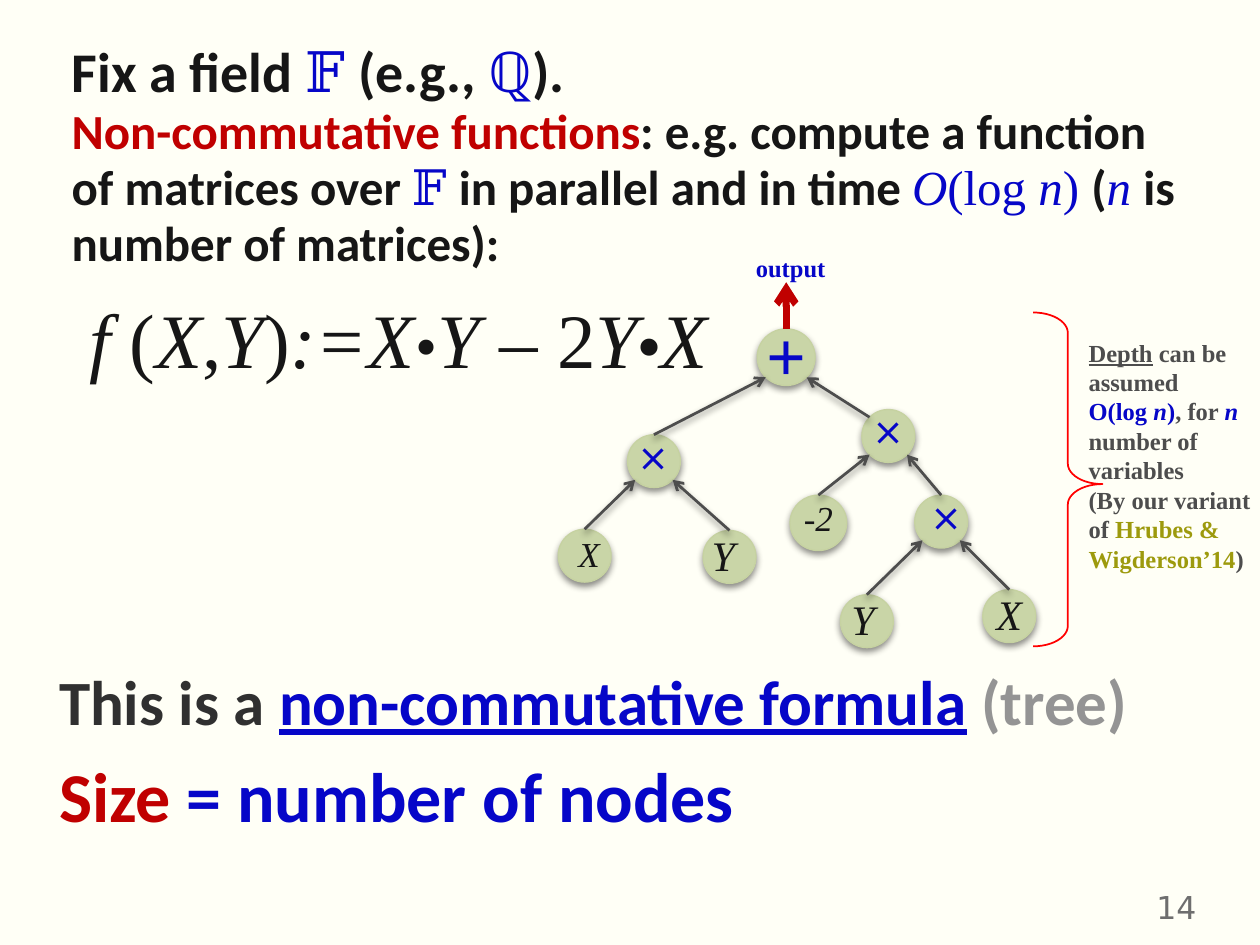
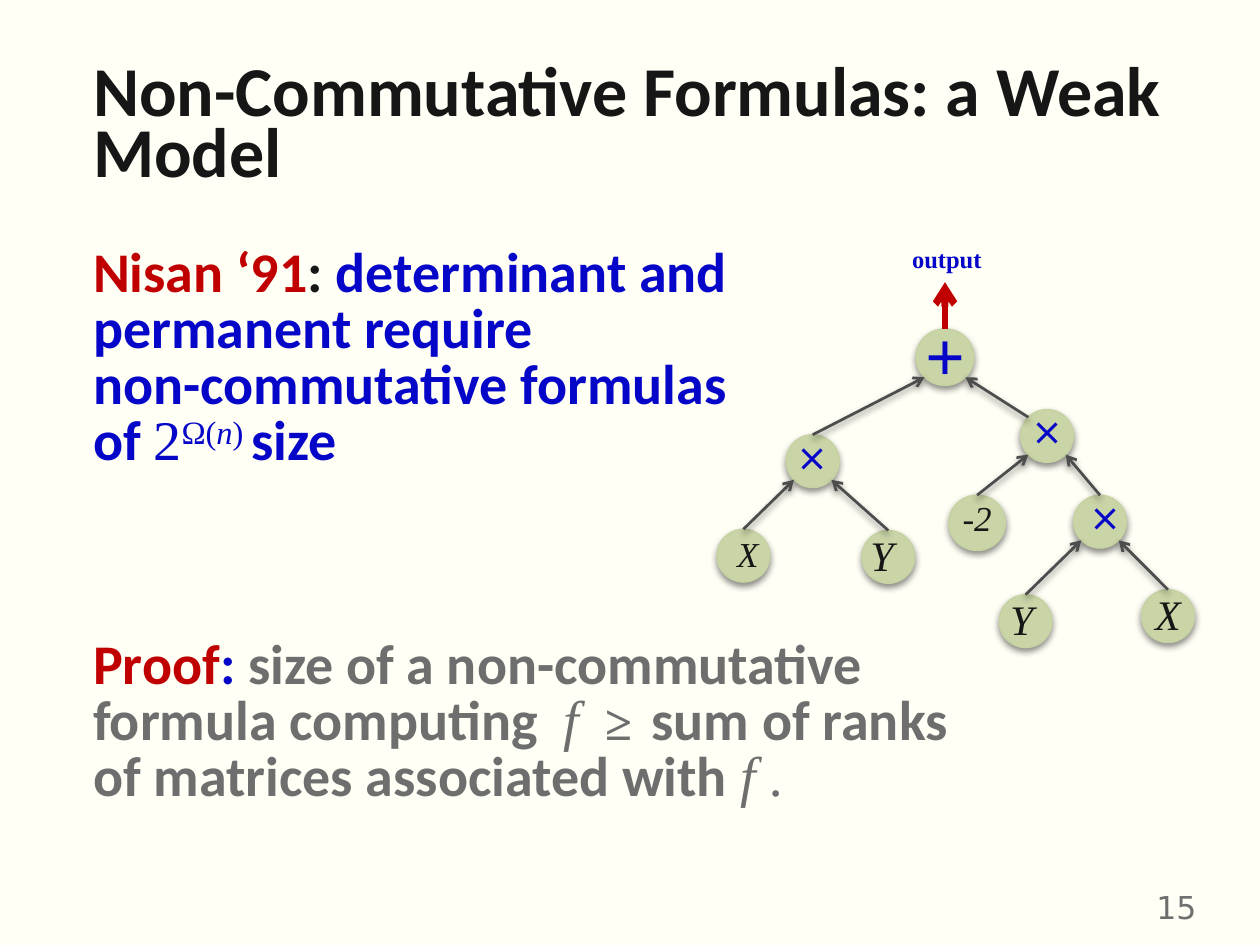
from dataclasses import dataclass
from math import sqrt

from lxml.etree import SubElement
from pptx import Presentation
from pptx.dml.color import RGBColor
from pptx.enum.shapes import MSO_CONNECTOR, MSO_SHAPE
from pptx.enum.text import MSO_ANCHOR, PP_ALIGN
from pptx.oxml.ns import qn
from pptx.util import Inches, Pt


@dataclass(frozen=True)
class Theme:
    # Colours
    paper: str = "FFFFF6"
    ink: str = "161616"
    dark: str = "303030"
    blue: str = "0606C8"
    red: str = "C00000"
    olive: str = "9D9A0D"
    grey: str = "6E6E6E"
    pale: str = "949494"
    edge: str = "4D4D4D"
    brace: str = "FF0000"
    node: str = "C9D5A7"
    rim: str = "C6D2A1"
    # Fonts
    sans: str = "Calibri"
    serif: str = "Times New Roman"
    digits: str = "DejaVu Sans"
    # Type sizes
    formula: int = 44
    title: int = 40
    statement: int = 36
    body: int = 32
    detail: int = 28
    leaf: int = 24
    small_leaf: int = 20
    page: int = 18
    note: int = 14


THEME = Theme()


def ink(colour):
    return {"color": colour}


def size(points):
    return {"size": Pt(points)}


# Run formats
HEAD = {"name": THEME.sans, "bold": True}
MATH = {"name": THEME.serif, "bold": False, "italic": False}
VAR = {**MATH, "italic": True}
NOTE = {"name": THEME.serif, "bold": True, **size(THEME.note)}
SUPER = {"baseline": "30000"}
WIDE_SPACE = {"spc": "700"}
LINE = {"line_spacing": Pt(32)}
CENTRED = {"alignment": PP_ALIGN.CENTER}
BLUE, RED, INK, GREY, EDGE = map(
    ink, (THEME.blue, THEME.red, THEME.ink, THEME.grey, THEME.edge))

# Formula tree: left, top, width, height, label, formats, insets
GATE = ("˟", {**MATH, **size(THEME.statement), **BLUE})
LEAF = {**VAR, **size(THEME.leaf), **INK}
SMALL_LEAF = {**LEAF, **size(THEME.small_leaf)}
NODES = {
    "sum": (6.01, 2.61, 0.46, 0.45, "+",
            {**MATH, "bold": True, **size(THEME.title), **BLUE}, (0, 0, 0, 0)),
    "xy": (4.98, 3.45, 0.42, 0.42, *GATE, (0, 0.2, 0, 0.05)),
    "minus 2yx": (6.84, 3.25, 0.42, 0.42, *GATE, (0, 0.2, 0, 0.05)),
    "yx": (7.26, 3.93, 0.42, 0.42, *GATE, (0.1, 0.2, 0.1, 0.05)),
    "left x": (4.43, 4.2, 0.42, 0.42, "X", SMALL_LEAF, (0.1, 0.05, 0.1, 0.05)),
    "left y": (5.58, 4.21, 0.42, 0.42, "Y", LEAF, (0, 0.05, 0.1, 0.05)),
    "minus 2": (6.27, 3.93, 0.45, 0.44, "-2", SMALL_LEAF, (0, 0, 0, 0.05)),
    "right y": (6.67, 4.72, 0.42, 0.42, "Y", LEAF, (0, 0, 0.06, 0)),
    "right x": (7.8, 4.68, 0.42, 0.42, "X", LEAF, (0, 0, 0, 0)),
}
# Child, parent, side of the parent (-1 left, 1 right)
EDGES = [
    ("xy", "sum", -1), ("minus 2yx", "sum", 1),
    ("left x", "xy", -1), ("left y", "xy", 1),
    ("minus 2", "minus 2yx", -1), ("yx", "minus 2yx", 1),
    ("right y", "yx", -1), ("right x", "yx", 1),
]


def diagonal_point(node, across, down):
    """Point on a node's rim at 45 degrees."""
    left, top, width, height = node[:4]
    return (left + width / 2 * (1 + across / sqrt(2)),
            top + height / 2 * (1 + down / sqrt(2)))


class Deck:
    def __init__(self, theme):
        self.theme = theme
        self.prs = Presentation()
        self.prs.slide_width, self.prs.slide_height = Inches(10), Inches(7.5)
        paper = self.prs.slide_master.background.fill
        paper.solid()
        paper.fore_color.rgb = RGBColor.from_string(theme.paper)
        self.slide = None

    def new_slide(self, number):
        self.slide = self.prs.slides.add_slide(self.prs.slide_layouts[6])
        self.text(9.08, 7, 0.67, 0.33, [[(
            str(number), {"name": self.theme.digits},
            size(self.theme.page), GREY)]])

    def add_paragraphs(self, frame, paragraphs, formats):
        """Each paragraph is a list of runs: (text, format, format, ...)."""
        for index, runs in enumerate(paragraphs):
            paragraph = frame.add_paragraph() if index else frame.paragraphs[0]
            for key, value in formats.items():
                if index or key != "space_before":
                    setattr(paragraph, key, value)
            for words, *run_formats in runs:
                run = paragraph.add_run()
                run.text = words
                for run_format in run_formats:
                    self.format_run(run, run_format)

    def format_run(self, run, run_format):
        for key, value in run_format.items():
            if key == "color":
                run.font.color.rgb = RGBColor.from_string(value)
            elif key in ("baseline", "spc"):
                run.font._element.set(key, value)
            else:
                setattr(run.font, key, value)

    def set_insets(self, frame, insets):
        for side, inset in zip(("left", "top", "right", "bottom"), insets):
            setattr(frame, f"margin_{side}", Inches(inset))

    def text(self, left, top, width, height, paragraphs, formats=None,
             insets=(0.1, 0.05, 0.1, 0.05)):
        box = self.slide.shapes.add_textbox(
            Inches(left), Inches(top), Inches(width), Inches(height))
        box.text_frame.word_wrap = True
        self.set_insets(box.text_frame, insets)
        self.add_paragraphs(box.text_frame, paragraphs, formats or {})

    def stroke(self, shape, colour, width):
        shape.line.color.rgb = RGBColor.from_string(colour)
        shape.line.width = Pt(width)

    def effects(self, shape, shadow):
        """Replace the theme's shadow with a soft one or with none."""
        effects = SubElement(shape._element.spPr, qn("a:effectLst"))
        if shadow:
            outer = SubElement(effects, qn("a:outerShdw"), blurRad=str(Pt(4)),
                               dist=str(Pt(2)), dir="5400000", rotWithShape="0")
            black = SubElement(outer, qn("a:srgbClr"), val="000000")
            SubElement(black, qn("a:alpha"), val="45000")

    def node(self, left, top, width, height, label, label_format, insets):
        circle = self.slide.shapes.add_shape(
            MSO_SHAPE.OVAL, Inches(left), Inches(top),
            Inches(width), Inches(height))
        circle.fill.solid()
        circle.fill.fore_color.rgb = RGBColor.from_string(self.theme.node)
        self.stroke(circle, self.theme.rim, 0.75)
        self.effects(circle, shadow=True)
        circle.text_frame.word_wrap = True
        circle.text_frame.vertical_anchor = MSO_ANCHOR.MIDDLE
        self.set_insets(circle.text_frame, insets)
        self.add_paragraphs(circle.text_frame, [[(label, label_format)]],
                            {**CENTRED, "line_spacing": 0.95})
        return circle

    def arrow(self, start, end, colour, width, shadow, source=None):
        line = self.slide.shapes.add_connector(
            MSO_CONNECTOR.STRAIGHT, *map(Inches, (*start, *end)))
        if source is not None:
            line.begin_connect(source, 0)
        self.stroke(line, colour, width)
        SubElement(line._element.spPr.find(qn("a:ln")), qn("a:tailEnd"),
                   type="arrow")
        self.effects(line, shadow)

    def brace(self, left, top, width, height):
        brace = self.slide.shapes.add_shape(
            MSO_SHAPE.RIGHT_BRACE, Inches(left), Inches(top),
            Inches(width), Inches(height))
        brace.adjustments[0], brace.adjustments[1] = 0.295, 0.514
        brace.fill.background()
        self.stroke(brace, self.theme.brace, 1)
        self.effects(brace, shadow=False)

    def formula_tree(self, shift, output_left, output_top):
        nodes = {key: (node[0] + shift, *node[1:])
                 for key, node in NODES.items()}
        circles = {key: self.node(*node) for key, node in nodes.items()}
        for child, parent, side in EDGES:
            left, top, width, *_ = nodes[child]
            start, source = (left + width / 2, top), circles[child]
            if child == "minus 2yx":
                start, source = diagonal_point(nodes[child], -1, -1), None
            self.arrow(start, diagonal_point(nodes[parent], side, 1),
                       self.theme.edge, 1.57, True, source)
        # Output arrow and label
        left, top, width, *_ = nodes["sum"]
        middle = left + width / 2
        self.arrow((middle, top), (middle, 2.24), self.theme.red, 4, False,
                   circles["sum"])
        self.text(output_left, output_top, 1.17, 0.34,
                  [[("output", NOTE, BLUE)]], CENTRED)


def formula_slide(deck):
    deck.new_slide(14)
    # Setting
    first, second = size(THEME.body), size(THEME.detail)
    deck.text(0.47, 0.33, 9.02, 1.9, [
        [("Fix a field ", HEAD, first, INK), ("𝔽", MATH, first, BLUE),
         (" (e.g., ", HEAD, first, INK),
         ("ℚ", MATH, first, BLUE), (").", HEAD, first, INK)],
        [("Non-commutative functions", HEAD, second, RED),
         (": e.g. compute a function of matrices over ", HEAD, second, INK),
         ("𝔽 ", MATH, second, BLUE),
         ("in parallel and in time ", HEAD, second, INK),
         ("O", VAR, second, BLUE), ("(log ", MATH, second, BLUE),
         ("n", VAR, second, BLUE), (") ", MATH, second, BLUE),
         ("(", HEAD, second, INK), ("n ", VAR, second, BLUE),
         ("is number of matrices):", HEAD, second, INK)],
    ], LINE)
    # Example function
    large, dot = size(THEME.formula), size(THEME.statement)
    deck.text(0.61, 2.55, 5.4, 0.55, [[
        (words, style, points, INK) for words, style, points in (
            ("f ", VAR, large), ("(", MATH, large), ("X", VAR, large),
            (",", MATH, large), ("Y", VAR, large), (")", MATH, large),
            (":=X", VAR, large), ("•", MATH, dot), ("Y ", VAR, large),
            ("– 2", MATH, large), ("Y", VAR, large),
            ("•", {**MATH, "bold": True}, dot), ("X", VAR, large))
    ]], LINE)
    # Definitions
    statement, big = size(THEME.statement), size(THEME.title)
    deck.text(0.37, 5.21, 9.12, 1.5, [
        [("This is a ", HEAD, statement, ink(THEME.dark)),
         ("non-commutative formula", HEAD, statement, BLUE,
          {"underline": True}),
         (" ", HEAD, statement), ("(tree)", HEAD, statement, ink(THEME.pale))],
        [("Size ", HEAD, big, RED), ("= number of nodes", HEAD, big, BLUE)],
    ], {"space_before": Pt(8)})
    # Tree with its depth
    deck.formula_tree(0, 5.69, 1.96)
    deck.brace(8.2, 2.48, 0.55, 2.65)
    slanted = {"italic": True}
    deck.text(8.64, 2.68, 1.36, 2.17, [
        [("Depth", NOTE, EDGE, {"underline": True}),
         (" can be assumed", NOTE, EDGE)],
        [("O(log ", NOTE, BLUE), ("n", NOTE, BLUE, slanted),
         (")", NOTE, BLUE), (", for ", NOTE, EDGE),
         ("n", NOTE, BLUE, slanted), (" number of variables", NOTE, EDGE)],
        [("(By our variant of ", NOTE, EDGE),
         ("Hrubes & Wigderson’14", NOTE, ink(THEME.olive)),
         (")", NOTE, EDGE)],
    ], insets=(0, 0, 0, 0))


def weak_model_slide(deck):
    deck.new_slide(15)
    deck.formula_tree(1.26, 6.93, 1.89)
    # Title
    deck.text(0.64, 0.5, 8.74, 1.07, [[
        ("Non-Commutative Formulas: a Weak Model", HEAD,
         size(THEME.title), INK)]], {"line_spacing": Pt(35)})
    # Lower bound
    body = size(THEME.body)
    head, math, var = ({**style, **body} for style in (HEAD, MATH, VAR))
    deck.text(0.64, 1.92, 5.6, 1.88, [
        [("Nisan ‘91", head, RED), (": ", head, INK),
         ("determinant and", head, BLUE)],
        [("permanent require", head, BLUE)],
        [("non-commutative formulas", head, BLUE)],
        [("of ", head, BLUE), ("2", math, BLUE), ("Ω(", math, BLUE, SUPER),
         ("n", var, BLUE, SUPER), (") ", math, BLUE, SUPER),
         ("size", head, BLUE)],
    ], LINE)
    # Proof idea
    deck.text(0.64, 5.03, 8.74, 1.43, [
        [("Proof", head, RED), (": ", head, BLUE),
         ("size of a non-commutative", head, GREY)],
        [("formula computing", head, GREY), (" ", head, GREY, WIDE_SPACE),
         ("f", var, GREY), (" ", var, GREY, WIDE_SPACE),
         ("≥", math, GREY, size(THEME.detail), {"bold": True}),
         (" ", head, {"name": THEME.digits}), ("sum of ranks", head, GREY)],
        [("of matrices associated with ", head, GREY), ("f .", var, GREY)],
    ], LINE)


def main():
    deck = Deck(THEME)
    formula_slide(deck)
    weak_model_slide(deck)
    deck.prs.save("out.pptx")


if __name__ == "__main__":
    main()
